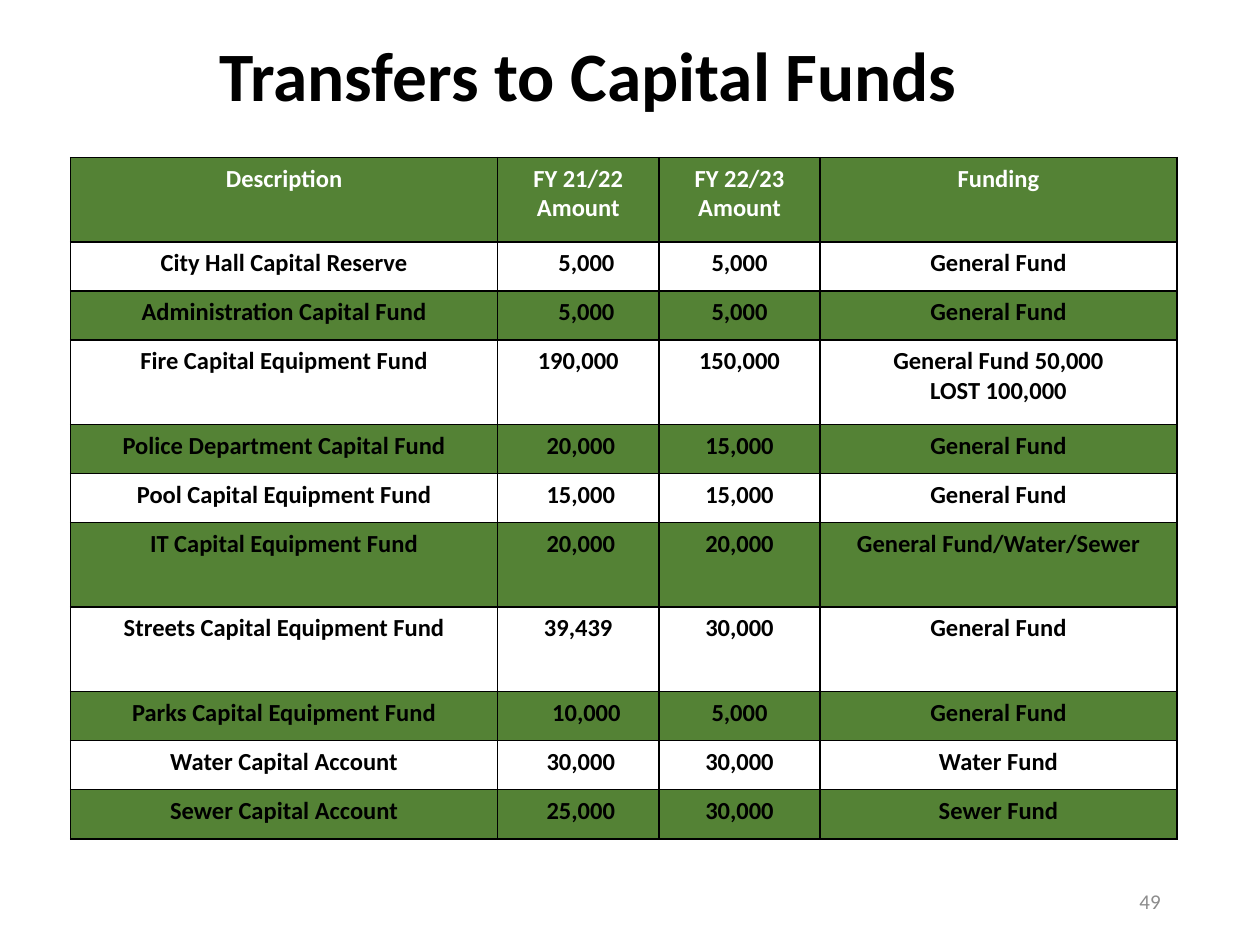
from pptx import Presentation
from pptx.dml.color import RGBColor as RGB
from pptx.enum.text import MSO_ANCHOR as Anchor, PP_ALIGN as Align
from pptx.oxml import parse_xml
from pptx.oxml.ns import nsdecls
from pptx.util import Inches, Pt

BLACK = RGB(0x00, 0x00, 0x00)
WHITE = RGB(0xFF, 0xFF, 0xFF)
GREEN = RGB(0x54, 0x82, 0x35)
GRAY = RGB(0x8C, 0x8C, 0x8C)

TITLE = dict(size=Pt(39.6), bold=True, color=BLACK)
NUMBER = dict(size=Pt(12), bold=False, color=GRAY)
HEAD = dict(size=Pt(14), bold=True, color=WHITE)
BODY = dict(size=Pt(14), bold=True, color=BLACK)

COLS = (3.39, 1.28, 1.28, 2.83)
LOW, TALL = 0.39, 0.67
WIDE, SLIM = 0.13, 0.04  # extra left margins of the FY 21/22 amounts

# row height, FY 21/22 extra margin, cell texts
ROWS = [
    (TALL, 0, ("Description", "FY 21/22 Amount", "FY 22/23 Amount", "Funding")),
    (LOW, WIDE, ("City Hall Capital Reserve", "5,000", "5,000", "General Fund")),
    (LOW, WIDE, ("Administration Capital Fund", "5,000", "5,000", "General Fund")),
    (TALL, 0, ("Fire Capital Equipment Fund", "190,000", "150,000",
               "General Fund 50,000\nLOST 100,000")),
    (LOW, SLIM, ("Police Department Capital Fund", "20,000", "15,000", "General Fund")),
    (LOW, SLIM, ("Pool Capital Equipment Fund", "15,000", "15,000", "General Fund")),
    (TALL, SLIM, ("IT Capital Equipment Fund", "20,000", "20,000",
                  "General Fund/Water/Sewer")),
    (TALL, 0, ("Streets Capital Equipment Fund", "39,439", "30,000", "General Fund")),
    (LOW, WIDE, ("Parks Capital Equipment Fund", "10,000", "5,000", "General Fund")),
    (LOW, SLIM, ("Water Capital Account", "30,000", "30,000", "Water Fund")),
    (LOW, SLIM, ("Sewer Capital Account", "25,000", "30,000", "Sewer Fund")),
]


def write(frame, text, look, align):
    frame.text = text
    for para in frame.paragraphs:
        para.alignment = align
        font = para.runs[0].font
        font.name = "Calibri"
        for key, value in look.items():
            if key == "color":
                font.color.rgb = value
            else:
                setattr(font, key, value)


def add_text(slide, box, text, look, align):
    frame = slide.shapes.add_textbox(*map(Inches, box)).text_frame
    frame.word_wrap = True
    frame.vertical_anchor = Anchor.MIDDLE
    write(frame, text, look, align)
    return frame


def add_borders(cell):
    props = cell._tc.get_or_add_tcPr()
    for side in "LRTB":
        props.append(parse_xml(
            f'<a:ln{side} {nsdecls("a")} w="{Pt(1)}"><a:solidFill>'
            f'<a:srgbClr val="{BLACK}"/></a:solidFill></a:ln{side}>'))


def add_funds(slide, left, top):
    """Place the table of transfers with its corner at left, top."""
    high = sum(row[0] for row in ROWS)
    box = map(Inches, (left, top, sum(COLS), high))
    table = slide.shapes.add_table(len(ROWS), len(COLS), *box).table
    for col, width in zip(table.columns, COLS):
        col.width = Inches(width)
    for r, (height, shift, texts) in enumerate(ROWS):
        table.rows[r].height = Inches(height)
        for c, text in enumerate(texts):
            cell = table.cell(r, c)
            add_borders(cell)
            cell.fill.solid()
            cell.fill.fore_color.rgb = WHITE if r in (1, 3, 5, 7, 9) else GREEN
            write(cell.text_frame, text, BODY if r else HEAD, Align.CENTER)
        table.cell(r, 1).margin_left = Inches(0.1 + shift)


def main():
    deck = Presentation()
    deck.slide_width, deck.slide_height = Inches(10), Inches(7.5)
    slide = deck.slides.add_slide(deck.slide_layouts[6])
    title = add_text(slide, (0.67, 0.25, 8, 0.75), "Transfers to Capital Funds",
                     TITLE, Align.CENTER)
    title.paragraphs[0].line_spacing = 0.9
    add_text(slide, (7.06, 6.95, 2.25, 0.4), "49", NUMBER, Align.RIGHT)
    add_funds(slide, 0.56, 1.25)
    deck.save("out.pptx")


if __name__ == "__main__":
    main()
